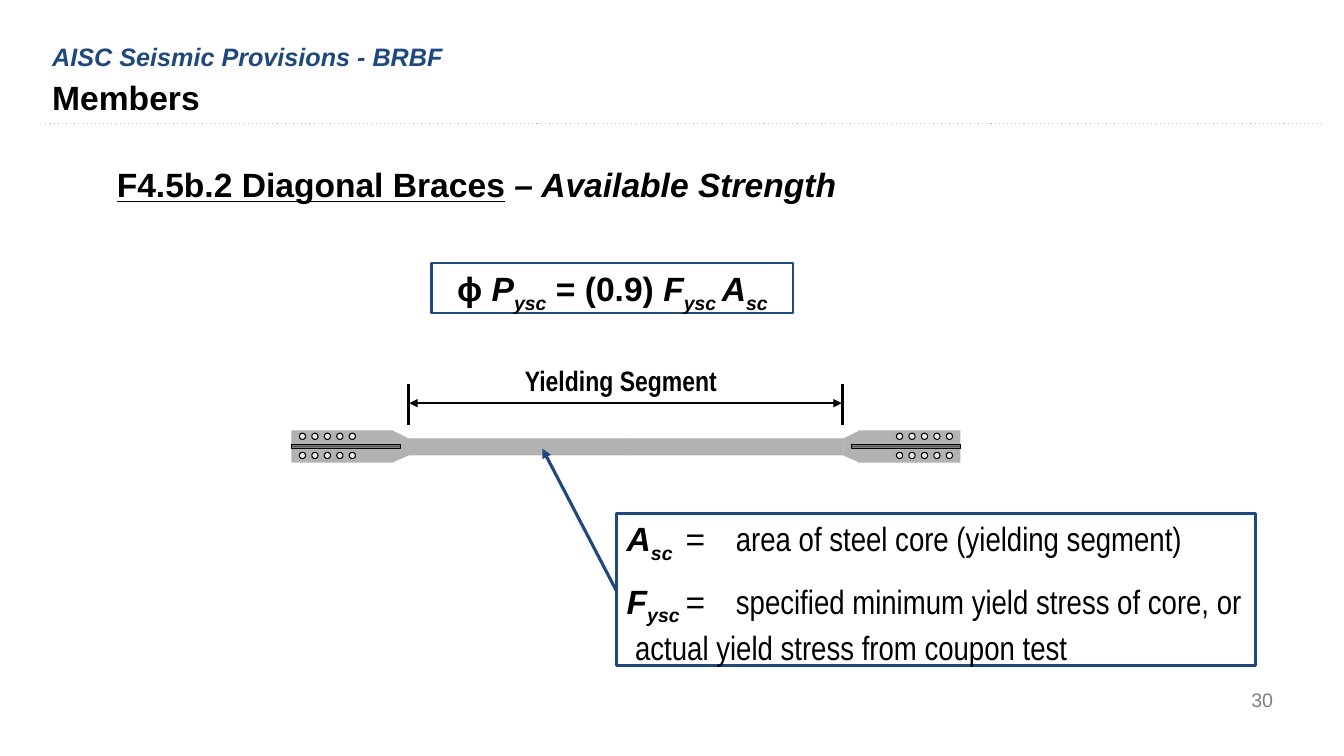
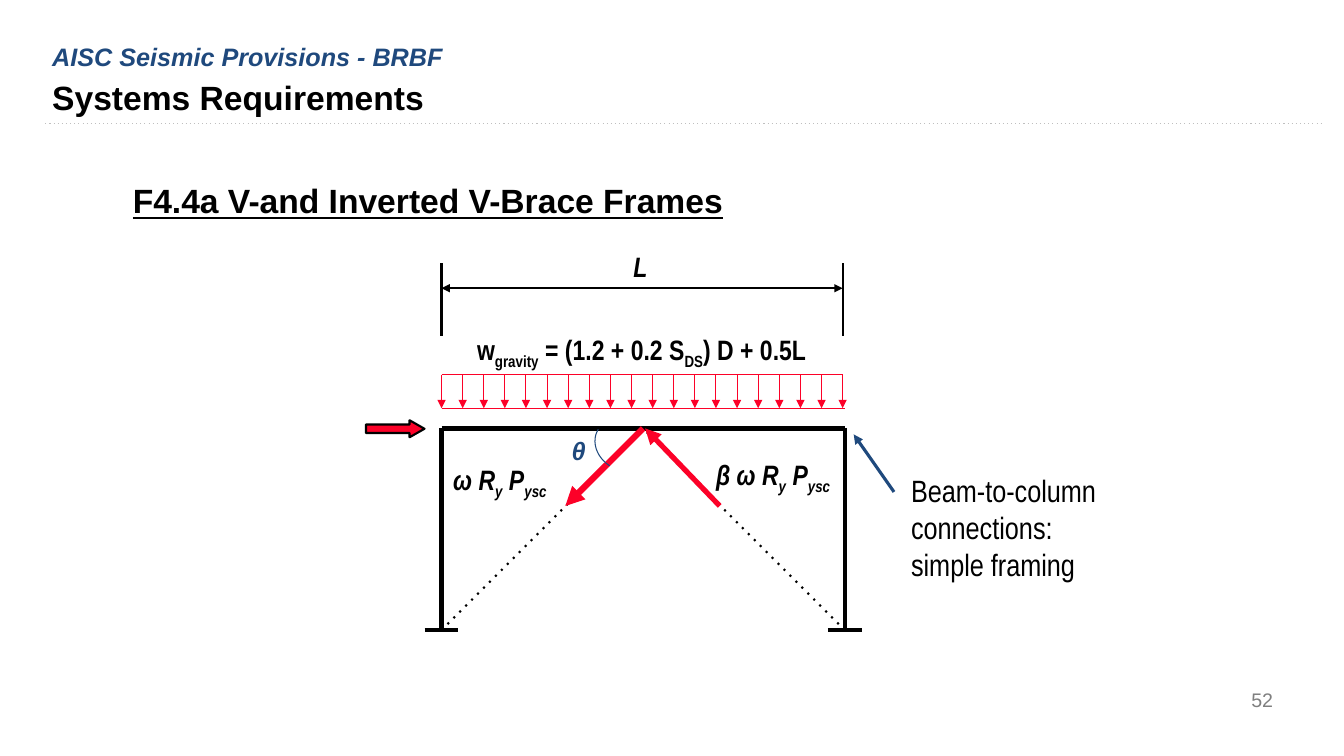
from copy import deepcopy

from lxml import etree
from pptx import Presentation
from pptx.dml.color import RGBColor
from pptx.enum import shapes, text
from pptx.oxml import ns
from pptx.util import Pt

BLACK = RGBColor(0x00, 0x00, 0x00)
BLUE = RGBColor(0x1F, 0x49, 0x7D)
RED = RGBColor(0xFC, 0x01, 0x28)
STEEL = RGBColor(0xB2, 0xB2, 0xB2)
SHADE = RGBColor(0x52, 0x52, 0x52)
CREAM = RGBColor(0xEE, 0xEC, 0xE1)
RULE = RGBColor(0xBF, 0xBF, 0xBF)
GREY = RGBColor(0x7F, 0x7F, 0x7F)

SANS, SLIM = "Arial", "Arial Narrow"
KIND = shapes.MSO_SHAPE
MID = text.PP_ALIGN.CENTER
LEFT = text.PP_ALIGN.LEFT
RIGHT = text.PP_ALIGN.RIGHT


def child(node, tag, **attrs):
    return etree.SubElement(node, ns.qn(tag), **attrs)


class Deck:
    def __init__(self):
        self.prs = Presentation()
        self.prs.slide_width, self.prs.slide_height = Pt(960), Pt(540)
        self.slide = None

    def page(self, title, number):
        """Start a slide with the shared header, rule and number."""
        self.slide = self.prs.slides.add_slide(self.prs.slide_layouts[6])
        self.line((32.4, 88.4), (944.6, 88.4), RULE, 0.75, dash="dot")
        self.label((30.2, 51.1, 862, 31.7), [(title, "b")], 24)
        self.label((30.2, 25.9, 862, 22.3),
                   [("AISC Seismic Provisions - BRBF", "bi")], 18, BLUE)
        box = self.label((692.6, 485.3, 223.9, 28.8), [(number, "")], 14,
                         GREY, align=RIGHT)
        box.text_frame.vertical_anchor = text.MSO_ANCHOR.MIDDLE

    def runs(self, para, runs, size, color=BLACK, font=SANS, align=LEFT):
        """Add (text, marks[, font]) runs; marks: b, i, u, s for subscript."""
        para.alignment = align
        for words, marks, *own in runs:
            run = para.add_run()
            run.text = words
            face = run.font
            face.name = own[0] if own else font
            face.size = Pt(size)
            face.color.rgb = color
            face.bold, face.italic = "b" in marks, "i" in marks
            face.underline = "u" in marks
            if "s" in marks:
                run._r.get_or_add_rPr().set("baseline", "-25000")

    def label(self, area, runs, size, color=BLACK, font=SANS, align=LEFT):
        box = self.slide.shapes.add_textbox(*map(Pt, area))
        box.text_frame.word_wrap = True
        self.runs(box.text_frame.paragraphs[0], runs, size, color, font, align)
        return box

    def paint(self, shape, fill=None, edge=None, width=0.75):
        shape.shadow.inherit = False
        if fill is None:
            shape.fill.background()
        else:
            shape.fill.solid()
            shape.fill.fore_color.rgb = fill
        if edge is None:
            shape.line.fill.background()
        else:
            shape.line.color.rgb = edge
            shape.line.width = Pt(width)
        return shape

    def shape(self, kind, area, fill=None, edge=None, width=0.75):
        item = self.slide.shapes.add_shape(kind, *map(Pt, area))
        return self.paint(item, fill, edge, width)

    def frame(self, area, width):
        """Add an outlined text box and return its text frame."""
        box = self.shape(KIND.RECTANGLE, area, None, BLUE, width)
        box.text_frame.word_wrap = True
        box.text_frame.vertical_anchor = text.MSO_ANCHOR.TOP
        return box.text_frame

    def poly(self, points, fill):
        pts = [(Pt(x), Pt(y)) for x, y in points]
        form = self.slide.shapes.build_freeform(*pts[0])
        form.add_line_segments(pts[1:], close=True)
        return self.paint(form.convert_to_shape(), fill)

    def line(self, start, end, color=BLACK, width=1.5, dash=None,
             head=False, tail=False):
        item = self.slide.shapes.add_connector(
            shapes.MSO_CONNECTOR.STRAIGHT, *map(Pt, (*start, *end)))
        item.line.color.rgb = color
        item.line.width = Pt(width)
        ln = item.line._get_or_add_ln()
        if dash:
            child(ln, "a:prstDash", val=dash)
        if head:
            child(ln, "a:headEnd", type="triangle")
        if tail:
            child(ln, "a:tailEnd", type="triangle")
        child(item._element.spPr, "a:effectLst")

    def shade(self, shape):
        """Fill with steel that darkens towards the middle."""
        shape.fill.gradient()
        stops = shape._element.spPr.find(".//" + ns.qn("a:gsLst"))
        stops.append(deepcopy(stops[0]))
        tones = zip(shape.fill.gradient_stops, (STEEL, SHADE, STEEL),
                    (0, 0.5, 1))
        for stop, tone, place in tones:
            stop.color.rgb = tone
            stop.position = place
        shape.fill.gradient_angle = 90


def brace(deck):
    """Draw the steel core: one half, and the same half mirrored."""
    axis = 447.1
    for side in (-1, 1):
        def area(far, y, wide, high):
            """Place a box by the distance of its outer edge from the axis."""
            x = axis - far if side < 0 else axis + far - wide
            return x, y, wide, high

        deck.shape(KIND.RECTANGLE, area(155.5, 313.2, 155.5, 12.2), STEEL)
        taper = ((167, 307.4), (155.3, 313.2), (155.3, 325.4), (167, 330.5))
        deck.poly([(axis + side * far, y) for far, y in taper], STEEL)
        deck.shape(KIND.RECTANGLE, area(239, 307.4, 72.7, 23.1), STEEL)
        deck.shade(deck.shape(KIND.RECTANGLE, area(239, 317.4, 77.8, 3),
                              STEEL, BLACK))
        for y in (309.4, 323.1):
            for col in range(5):
                deck.shape(KIND.OVAL, area(233.3 - 8.9 * col, y, 4.5, 4.5),
                           CREAM, BLACK)


def terms(deck):
    """Write the box that defines the symbols."""
    frame = deck.frame((440.6, 366.5, 456.5, 108.7), 2.25)
    rows = (("A", "sc", "area of steel core (yielding segment)"),
            ("F", "ysc", "specified minimum yield stress of core, or "
                         "actual yield stress from coupon test"))
    for n, (sign, sub, words) in enumerate(rows):
        para = frame.add_paragraph() if n else frame.paragraphs[0]
        deck.runs(para, [(sign, "bi"), (sub, "bis"), ("\t=\t", ""),
                         (words, "", SLIM)], 24)
        para.space_before = Pt(12 * n)
        props = para._p.get_or_add_pPr()
        props.set("marL", str(Pt(6)))
        props.set("indent", str(Pt(-6)))
        tabs = child(props, "a:tabLst")
        for stop in (46, 73):
            child(tabs, "a:tab", pos=str(Pt(stop)), algn="l")


def strength(deck):
    deck.page("Members", "30")
    deck.label((76.3, 113.8, 579.6, 36),
               [("F4.5b.2 Diagonal Braces", "bu"),
                (" – Available Strength", "bi")], 24)
    frame = deck.frame((308.2, 187.9, 258.5, 36), 1.5)
    deck.runs(frame.paragraphs[0],
              [("ϕ ", "b"), ("P", "bi"), ("ysc", "bis"), (" = (0.9) ", "b"),
               ("F", "bi"), ("ysc ", "bis"), ("A", "bi"), ("sc", "bis")],
              24, align=MID)
    brace(deck)
    for x in (291.6, 602):
        deck.line((x, 274.3), (x, 303.8), width=2.25)
    deck.line((292.3, 288), (601.2, 288), head=True, tail=True)
    deck.label((321.1, 256.3, 244.8, 31), [("Yielding Segment", "b")], 20,
               font=SLIM, align=MID)
    terms(deck)
    deck.line((440.6, 422.6), (387.4, 320.4), BLUE, 2.25, tail=True)


def gravity(deck, left, right):
    """Draw the span dimension and the load spread along it."""
    for x in (left, right):
        deck.line((x, 239.8), (x, 187.9))
    deck.line((left, 205.9), (right, 205.9), head=True, tail=True)
    deck.label((437, 175, 41, 31), [("L", "bi")], 20, font=SLIM, align=MID)
    deck.label((315.4, 234, 285.8, 31.7),
               [("w", "b"), ("gravity", "bs"), (" = (1.2 + 0.2 S", "b"),
                ("DS", "bs"), (") D + 0.5L", "b")],
               20, font=SLIM, align=MID)
    top, low, count = 267.8, 291.6, 20
    for n in range(count):
        x = left + (right - left) * n / (count - 1)
        deck.line((x, top), (x, low), RED, 0.75, tail=True)
    deck.line((left, top), (right, top), RED, 0.75)
    deck.line((left, low), (right + 1.5, low), RED, 0.75)


def bent(deck, left, right):
    """Draw the braced frame, its brace forces and their labels."""
    top, base, peak = 306, 450, (left + right) / 2
    for x in (left, right):
        deck.line((x, base), (x, top), width=3)
        deck.line((x, base), (peak, top), dash="dot")
        deck.line((x - 12, base), (x + 12, base), width=3)
    deck.line((left, top), (right, top), width=3)
    deck.line((peak, top), (403.9, 361.4), RED, 4.5, tail=True)
    deck.line((514.1, 361.4), (460.8, top), RED, 3.75, tail=True)
    force = [("y", "bis"), (" P", "bi"), ("ysc", "bis")]
    for words, area in (("ω R", (310.3, 326.9, 93.6, 31.7)),
                        ("β ω R", (500.4, 323.3, 103.7, 31.7))):
        deck.label(area, [(words, "bi"), *force], 20, font=SLIM, align=MID)
    deck.label((380.2, 307.4, 66.2, 28.8), [("θ", "bi")], 18, BLUE, align=MID)
    arc = deck.shape(KIND.ARC, (424.1, 300.2, 41.8, 35.3), None, BLUE)
    arc.rotation = 212.5


def system(deck):
    deck.page("Systems Requirements", "52")
    deck.label((87.8, 125.3, 840.2, 36),
               [("F4.4a V-and Inverted V-Brace Frames", "bu")], 24)
    bent(deck, 315.4, 603.4)
    gravity(deck, 315.4, 601.9)
    push = deck.shape(KIND.RIGHT_ARROW, (261.4, 300.2, 41.8, 12.2), RED,
                      BLACK, 1.5)
    push.adjustments[0], push.adjustments[1] = 0.5, 0.875
    deck.label((643.7, 333.4, 159.1, 87.1),
               [("Beam-to-column connections: simple framing", "")], 22,
               font=SLIM)
    deck.line((638.6, 351.4), (609.8, 310.3), BLUE, 2.25, tail=True)


def main():
    deck = Deck()
    strength(deck)
    system(deck)
    deck.prs.save("out.pptx")


if __name__ == "__main__":
    main()
